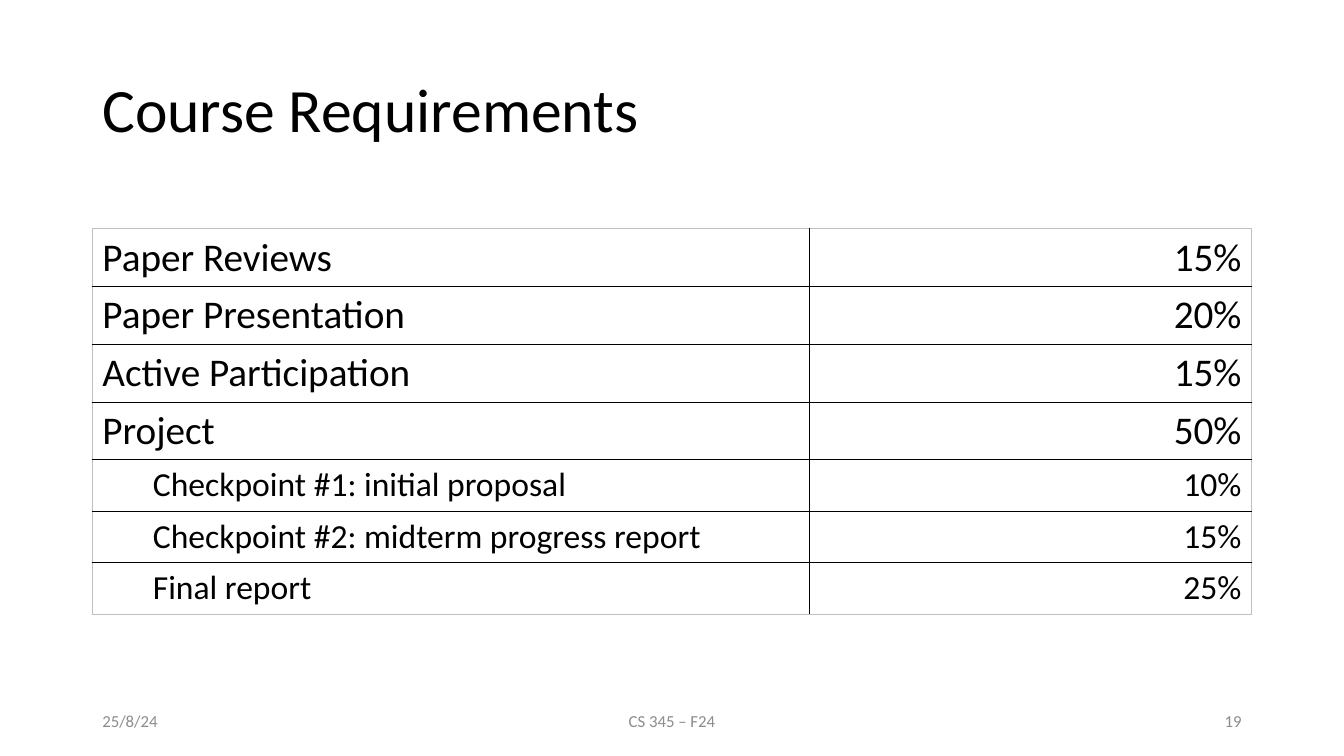
import pptx
import pptx.dml.color
import pptx.enum.text
import pptx.oxml.ns
import pptx.util
from lxml import etree

PX = 9525
FONT = "Calibri"
BLACK = pptx.dml.color.RGBColor(0, 0, 0)
GREY = pptx.dml.color.RGBColor(0x8C, 0x8C, 0x8C)
EDGE = pptx.dml.color.RGBColor(0xBF, 0xBF, 0xBF)
WHITE = pptx.dml.color.RGBColor(255, 255, 255)
LEFT = pptx.enum.text.PP_ALIGN.LEFT
CENTER = pptx.enum.text.PP_ALIGN.CENTER
RIGHT = pptx.enum.text.PP_ALIGN.RIGHT

MARGIN = 88
CONTENT_W = 1104
FOOTER_TOP = 667
FOOTER_H = 38
LABEL_W = 683
INDENT = 48
REQUIREMENTS = [
    ("Paper Reviews", "15%", False),
    ("Paper Presentation", "20%", False),
    ("Active Participation", "15%", False),
    ("Project", "50%", False),
    ("Checkpoint #1: initial proposal", "10%", True),
    ("Checkpoint #2: midterm progress report", "15%", True),
    ("Final report", "25%", True),
]


def px(n):
    return pptx.util.Emu(n * PX)


def add_run(p, text, size, color, align):
    p.alignment = align
    r = p.add_run()
    r.text = text
    r.font.name = FONT
    r.font.size = pptx.util.Pt(size)
    r.font.color.rgb = color


def add_text(s, x, y, w, h, text, size, color, align=LEFT):
    tf = s.shapes.add_textbox(px(x), px(y), px(w), px(h)).text_frame
    tf.word_wrap = True
    tf.vertical_anchor = pptx.enum.text.MSO_ANCHOR.MIDDLE
    p = tf.paragraphs[0]
    add_run(p, text, size, color, align)
    return p


def set_border(cell, side, color):
    qn = pptx.oxml.ns.qn
    tcPr = cell._tc.get_or_add_tcPr()
    ln = etree.SubElement(tcPr, qn(f"a:ln{side}"), w=str(pptx.util.Pt(1)))
    fill = etree.SubElement(ln, qn("a:solidFill"))
    etree.SubElement(fill, qn("a:srgbClr"), val=str(color))


def fill_cell(cell, text, size, align, outer_sides):
    for side in "LRTB":
        set_border(cell, side, EDGE if side in outer_sides else BLACK)
    cell.fill.solid()
    cell.fill.fore_color.rgb = WHITE
    add_run(cell.text_frame.paragraphs[0], text, size, BLACK, align)


def add_requirements(s):
    last = len(REQUIREMENTS) - 1
    heights = [49 if sub else 55 for _, _, sub in REQUIREMENTS]
    table = s.shapes.add_table(len(REQUIREMENTS), 2, px(MARGIN), px(218),
                               px(CONTENT_W), px(sum(heights))).table
    table.first_row = False
    table.horz_banding = False
    table.columns[0].width = px(LABEL_W)
    table.columns[1].width = px(CONTENT_W - LABEL_W)
    for i, (label, share, sub) in enumerate(REQUIREMENTS):
        table.rows[i].height = px(heights[i])
        size = 24 if sub else 28
        ends = ("T" if i == 0 else "") + ("B" if i == last else "")
        fill_cell(table.cell(i, 0), label, size, LEFT, "L" + ends)
        fill_cell(table.cell(i, 1), share, size, RIGHT, "R" + ends)
        if sub:
            p = table.cell(i, 0).text_frame.paragraphs[0]
            p.level = 1
            p._p.get_or_add_pPr().set("marL", str(px(INDENT)))


def add_footer(s):
    for x, w, text, align in [(424, 432, "CS 345 – F24", CENTER),
                              (904, 288, "19", RIGHT),
                              (MARGIN, 288, "25/8/24", LEFT)]:
        add_text(s, x, FOOTER_TOP, w, FOOTER_H, text, 12, GREY, align)


def main():
    prs = pptx.Presentation()
    prs.slide_width = px(1280)
    prs.slide_height = px(720)
    s = prs.slides.add_slide(prs.slide_layouts[6])
    title = add_text(s, MARGIN, 38, CONTENT_W, 139,
                     "Course Requirements", 44, BLACK)
    title.line_spacing = 0.9
    add_requirements(s)
    add_footer(s)
    prs.save("out.pptx")


if __name__ == "__main__":
    main()
